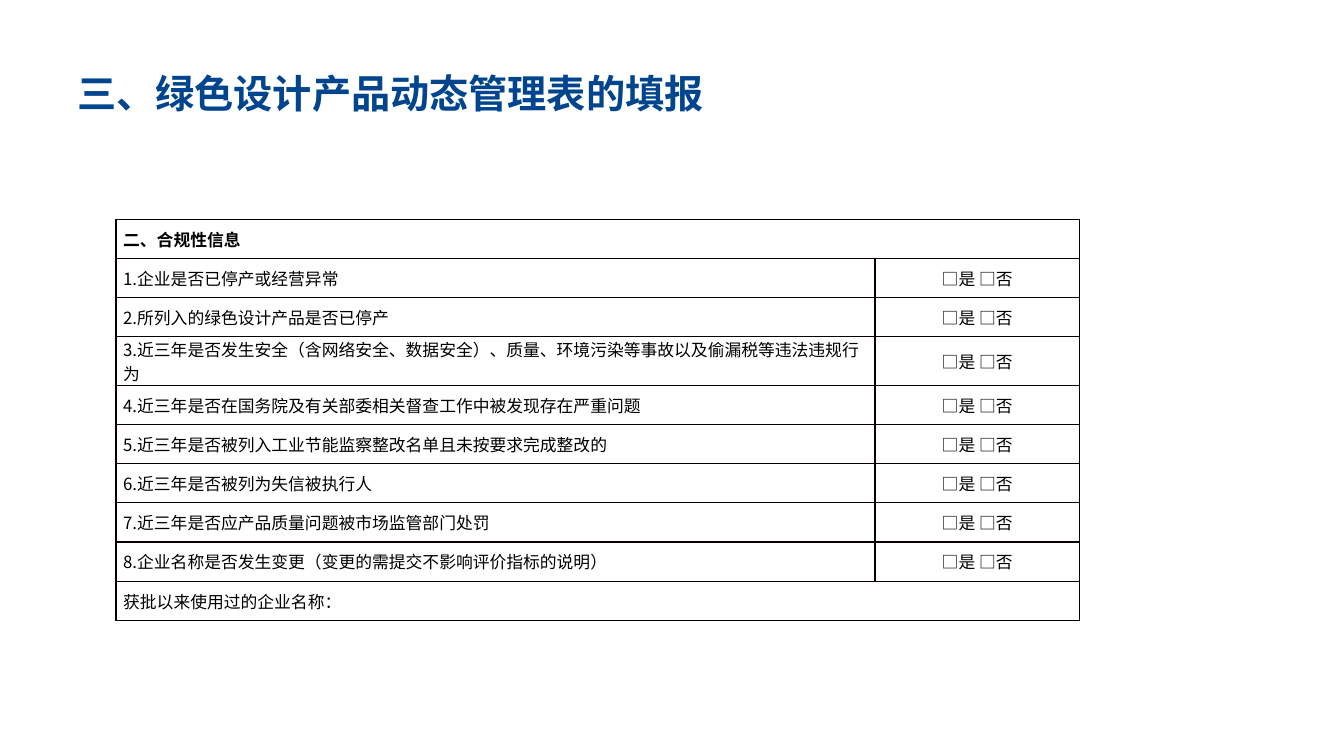
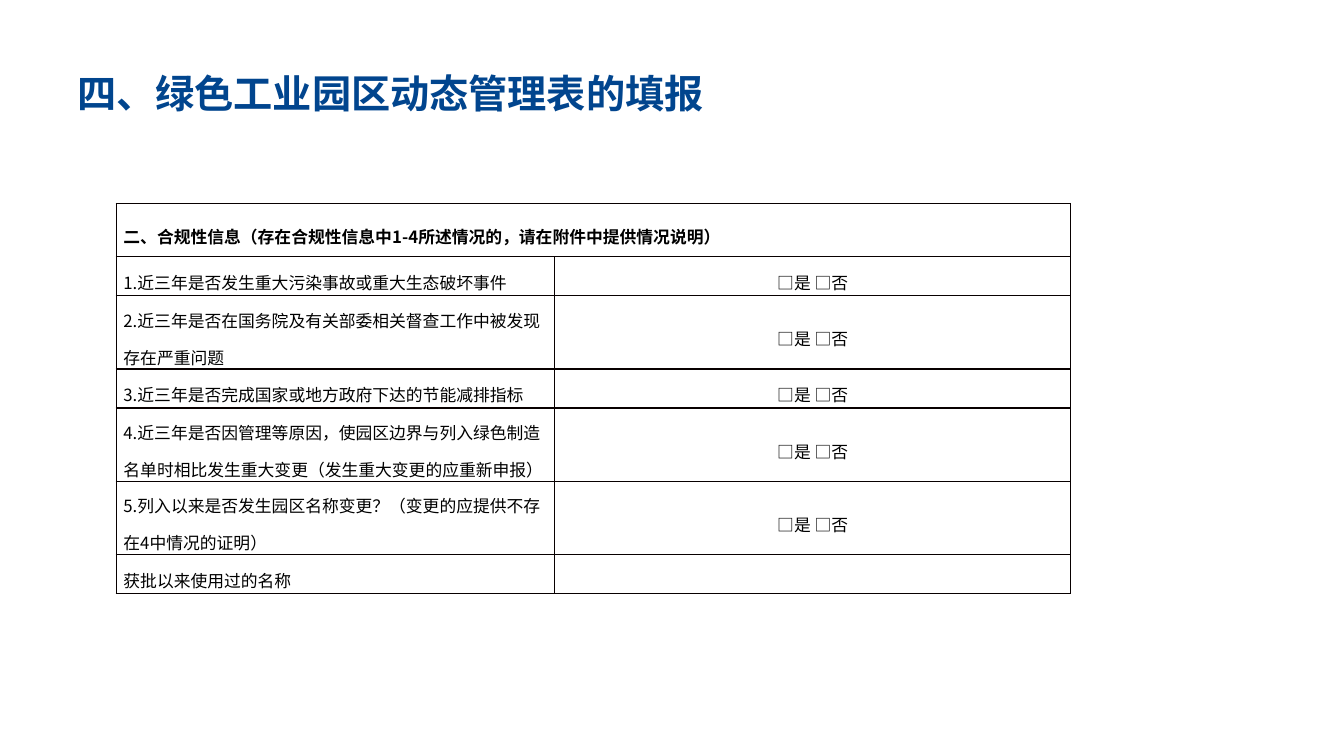
"""Build two slides with compliance forms for green design products and green parks."""
from dataclasses import dataclass

import lxml.etree
import pptx
import pptx.dml.color
import pptx.enum.text
import pptx.oxml.ns
import pptx.util

Pt = pptx.util.Pt
COLORS = {"title": "01458E", "text": "000000", "border": "080000"}
SANS, SERIF, SYMBOL = "Noto Sans CJK SC", "Times New Roman", "Arial"
TITLE_FRAME = (48, 21.6, 864, 90)
ROW_HEIGHT = 28
SIDE_MARGIN = 5.2
BORDER_WIDTH = 1


@dataclass(frozen=True)
class Span:
    text: str
    font: str = SANS


CHOICE = (Span("□", SYMBOL), Span("是 ", SERIF), Span("□", SYMBOL), Span("否", SERIF))


@dataclass(frozen=True)
class Form:
    title: str
    left: float
    top: float
    widths: tuple[float, float]
    heading: tuple[Span, ...]
    heading_height: float
    questions: tuple[str, ...]
    closing: str
    closing_merged: bool
    line_spacing: float


FORMS = (
    Form(
        title="三、绿色设计产品动态管理表的填报",
        left=82.8,
        top=156.5,
        widths=(542.2, 146),
        heading=(Span("二、合规性信息", SERIF),),
        heading_height=ROW_HEIGHT,
        questions=(
            "1.企业是否已停产或经营异常",
            "2.所列入的绿色设计产品是否已停产",
            "3.近三年是否发生安全（含网络安全、数据安全）、质量、环境污染等事故以及偷漏税等违法违规行为",
            "4.近三年是否在国务院及有关部委相关督查工作中被发现存在严重问题",
            "5.近三年是否被列入工业节能监察整改名单且未按要求完成整改的",
            "6.近三年是否被列为失信被执行人",
            "7.近三年是否应产品质量问题被市场监管部门处罚",
            "8.企业名称是否发生变更（变更的需提交不影响评价指标的说明）",
        ),
        closing="获批以来使用过的企业名称：",
        closing_merged=True,
        line_spacing=1.0,
    ),
    Form(
        title="四、绿色工业园区动态管理表的填报",
        left=83,
        top=145.3,
        widths=(313.2, 368.6),
        heading=(
            Span("二、合规性信息（存在合规性信息中", SERIF),
            Span("1-4"),
            Span("所述情况的，请在附件中提供情况说明）", SERIF),
        ),
        heading_height=38,
        questions=(
            "1.近三年是否发生重大污染事故或重大生态破坏事件",
            "2.近三年是否在国务院及有关部委相关督查工作中被发现存在严重问题",
            "3.近三年是否完成国家或地方政府下达的节能减排指标",
            "4.近三年是否因管理等原因，使园区边界与列入绿色制造名单时相比发生重大变更（发生重大变更的应重新申报）",
            "5.列入以来是否发生园区名称变更？（变更的应提供不存在4中情况的证明）",
        ),
        closing="获批以来使用过的名称",
        closing_merged=False,
        line_spacing=1.5,
    ),
)


def add_text(para, text: str, *, font: str = SANS, size: float = 12,
             color: str = "text", bold: bool = False) -> None:
    span = para.add_run()
    span.text = text
    span.font.name = font
    span.font.size = Pt(size)
    span.font.bold = bold
    span.font.color.rgb = pptx.dml.color.RGBColor.from_string(COLORS[color])
    properties = span.font._element
    east_asian = lxml.etree.SubElement(properties, pptx.oxml.ns.qn("a:ea"))
    east_asian.set("typeface", SANS)


def add_title(page, text: str) -> None:
    box = page.shapes.title
    box.left, box.top, box.width, box.height = map(Pt, TITLE_FRAME)
    frame = box.text_frame
    frame.word_wrap = True
    frame.vertical_anchor = pptx.enum.text.MSO_ANCHOR.MIDDLE
    para = frame.paragraphs[0]
    para.alignment = pptx.enum.text.PP_ALIGN.LEFT
    add_text(para, text, size=28, color="title", bold=True)


def format_cell(cell) -> None:
    cell.margin_left = cell.margin_right = Pt(SIDE_MARGIN)
    cell.margin_top = cell.margin_bottom = Pt(0)
    cell.vertical_anchor = pptx.enum.text.MSO_ANCHOR.MIDDLE
    cell.fill.background()
    properties = cell._tc.get_or_add_tcPr()
    for position, side in enumerate("LRTB"):
        line = lxml.etree.Element(pptx.oxml.ns.qn(f"a:ln{side}"), w=str(Pt(BORDER_WIDTH)))
        fill = lxml.etree.SubElement(line, pptx.oxml.ns.qn("a:solidFill"))
        lxml.etree.SubElement(fill, pptx.oxml.ns.qn("a:srgbClr"), val=COLORS["border"])
        properties.insert(position, line)


def fill_cell(cell, spans: tuple[Span, ...], *, line_spacing: float,
              bold: bool = False, centered: bool = False) -> None:
    para = cell.text_frame.paragraphs[0]
    para.line_spacing = line_spacing
    if centered:
        para.alignment = pptx.enum.text.PP_ALIGN.CENTER
    for span in spans:
        add_text(para, span.text, font=span.font, bold=bold)


def add_form(page, form: Form) -> None:
    heights = [form.heading_height] + [ROW_HEIGHT] * (len(form.questions) + 1)
    last = len(heights) - 1
    frame = page.shapes.add_table(
        len(heights), len(form.widths), Pt(form.left), Pt(form.top),
        Pt(sum(form.widths)), Pt(sum(heights)))
    table = frame.table
    table.first_row = table.horz_banding = False
    for column, width in zip(table.columns, form.widths):
        column.width = Pt(width)
    for row, height in zip(table.rows, heights):
        row.height = Pt(height)
    for cell in table.iter_cells():
        format_cell(cell)
    spacing = form.line_spacing
    fill_cell(table.cell(0, 0), form.heading, line_spacing=spacing, bold=True)
    for index, question in enumerate(form.questions, start=1):
        fill_cell(table.cell(index, 0), (Span(question),), line_spacing=spacing)
        fill_cell(table.cell(index, 1), CHOICE, line_spacing=spacing, centered=True)
    fill_cell(table.cell(last, 0), (Span(form.closing),), line_spacing=spacing)
    for index in (0, last) if form.closing_merged else (0,):
        table.cell(index, 0).merge(table.cell(index, 1))


def main() -> None:
    deck = pptx.Presentation()
    deck.slide_width, deck.slide_height = Pt(960), Pt(540)
    for form in FORMS:
        page = deck.slides.add_slide(deck.slide_layouts.get_by_name("Title Only"))
        add_title(page, form.title)
        add_form(page, form)
    deck.save("out.pptx")


if __name__ == "__main__":
    main()
